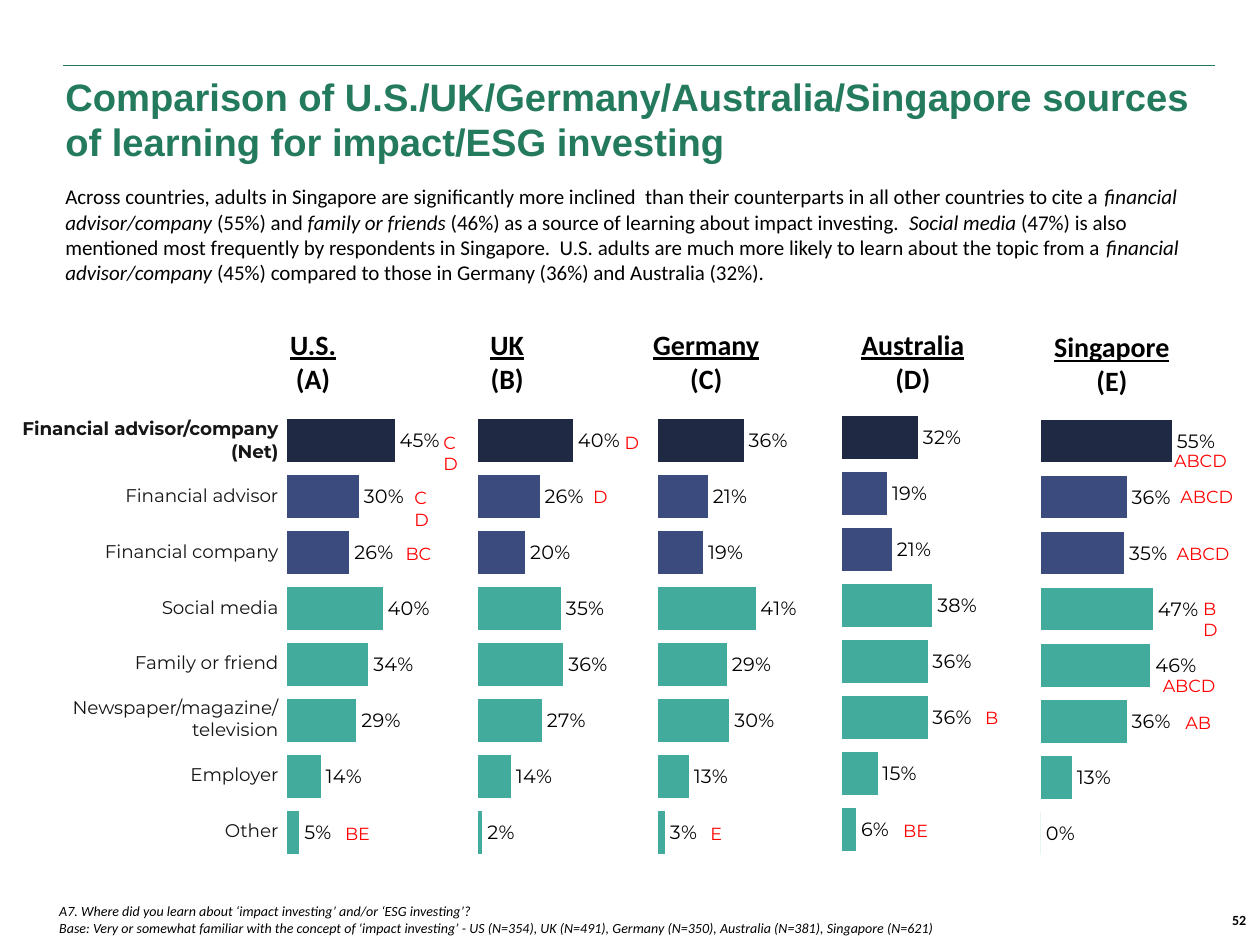
import pptx
import pptx.util
import pptx.chart.data
import pptx.dml.color
import pptx.enum.chart
import pptx.enum.shapes
import pptx.enum.text
import pptx.oxml
import pptx.oxml.ns
from lxml import etree

Inches, Pt = pptx.util.Inches, pptx.util.Pt
ALIGN = pptx.enum.text.PP_ALIGN
ANCHOR = pptx.enum.text.MSO_ANCHOR

GREEN, TEAL, BLUE, NAVY = "237A5D", "43AB9B", "3B4B7D", "202944"
BLACK, RED, INK = "000000", "FF0000", "171616"

TITLE = ("Comparison of U.S./UK/Germany/Australia/Singapore sources of learning "
         "for impact/ESG investing")
SUMMARY = [
    ("Across countries, adults in Singapore are significantly more inclined  than "
     "their counterparts in all other countries to cite a ", False),
    ("financial advisor/company", True),
    (" (55%) and ", False),
    ("family or friends", True),
    (" (46%) as a source of learning about impact investing.  ", False),
    ("Social media ", True),
    ("(47%) is also mentioned most frequently by respondents in Singapore.  U.S. adults "
     "are much more likely to learn about the topic from a ", False),
    ("financial advisor/company ", True),
    ("(45%) compared to those in Germany (36%) and Australia (32%).", False),
]
FOOTNOTES = [
    "A7. Where did you learn about ‘impact investing’ and/or ‘ESG investing’?",
    "Base: Very or somewhat familiar with the concept of 'impact investing’ - US (N=354), "
    "UK (N=491), Germany (N=350), Australia (N=381), Singapore (N=621)",
]
SOURCES = [
    (["Financial advisor/company (Net)"], NAVY),
    (["Financial advisor"], BLUE),
    (["Financial company"], BLUE),
    (["Social media"], TEAL),
    (["Family or friend"], TEAL),
    (["Newspaper/magazine/", "television"], TEAL),
    (["Employer"], TEAL),
    (["Other"], TEAL),
]
COUNTRIES = [
    dict(name="U.S.", letter="A", head=(2.2, 2.55, 0.57), chart=(2.2, 2.99), plot_y=0.047,
         values=[45, 30, 26, 40, 34, 29, 14, 5]),
    dict(name="UK", letter="B", head=(3.79, 2.55, 0.47), chart=(3.71, 2.99), plot_y=0.047,
         values=[40, 26, 20, 35, 36, 27, 14, 2]),
    dict(name="Germany", letter="C", head=(5.02, 2.55, 1.17), chart=(5.14, 2.99), plot_y=0.047,
         values=[36, 21, 19, 41, 29, 30, 13, 3]),
    dict(name="Australia", letter="D", head=(6.73, 2.55, 1.03), chart=(6.6, 2.99), plot_y=0.041,
         values=[32, 19, 21, 38, 36, 36, 15, 6]),
    dict(name="Singapore", letter="E", head=(8.26, 2.57, 1.13), chart=(8.18, 3.02), plot_y=0.041,
         values=[55, 36, 35, 47, 46, 36, 13, 0]),
]
MARKS = [
    ("CD", 3.42, 3.38), ("CD", 3.19, 3.82), ("BC", 3.12, 4.26), ("BE", 2.64, 6.48),
    ("D", 4.86, 3.38), ("D", 4.61, 3.81), ("E", 5.54, 6.48),
    ("B", 7.72, 5.56), ("BE", 7.07, 6.46),
    ("ABCD", 9.22, 3.52), ("ABCD", 9.27, 3.81), ("ABCD", 9.24, 4.26),
    ("BD", 9.45, 4.7), ("ABCD", 9.13, 5.31), ("AB", 9.31, 5.6),
]
MARK_WIDTHS = {1: 0.31, 2: 0.41, 4: 0.62}


def rgb(color):
    return pptx.dml.color.RGBColor.from_string(color)


def add_run(p, text, size, font="Calibri", color=BLACK, bold=False, italic=False, underline=False):
    r = p.add_run()
    r.text = text
    f = r.font
    f.size, f.name, f.bold, f.italic, f.underline = Pt(size), font, bold, italic, underline
    f.color.rgb = rgb(color)


def paragraph(tf, index, align=ALIGN.LEFT):
    p = tf.add_paragraph() if index else tf.paragraphs[0]
    p.alignment = align
    return p


def add_box(s, x, y, w, h, wrap=True, anchor=ANCHOR.TOP):
    tf = s.shapes.add_textbox(Inches(x), Inches(y), Inches(w), Inches(h)).text_frame
    tf.word_wrap = wrap
    tf.vertical_anchor = anchor
    return tf


def add_bars(s, country):
    data = pptx.chart.data.CategoryChartData(number_format="0%")
    data.categories = ["1"]
    for i, value in enumerate(reversed(country["values"]), 1):
        data.add_series(f"Series {i}", [value / 100])
    x, y = country["chart"]
    chart = s.shapes.add_chart(pptx.enum.chart.XL_CHART_TYPE.BAR_CLUSTERED, Inches(x), Inches(y),
                               Inches(2.47), Inches(4.28), data).chart
    chart.has_legend = chart.has_title = False
    chart.font.size, chart.font.name = Pt(11), "Montserrat"
    chart.font.color.rgb = rgb(BLACK)
    axis = chart.value_axis
    axis.minimum_scale, axis.maximum_scale = 0, 1
    axis.has_major_gridlines = False
    axis.visible = chart.category_axis.visible = False
    plot = chart.plots[0]
    plot.gap_width, plot.overlap, plot.vary_by_categories = 80, -31, False
    for ser, (_, color) in zip(plot.series, reversed(SOURCES)):
        ser.format.fill.solid()
        ser.format.fill.fore_color.rgb = rgb(color)
        ser.invert_if_negative = False
        labels = ser.data_labels
        labels.show_value = True
        labels.number_format, labels.number_format_is_linked = "0%", False
        labels.position = pptx.enum.chart.XL_LABEL_POSITION.OUTSIDE_END
    area = chart._chartSpace.chart.plotArea
    for old in area.findall(pptx.oxml.ns.qn("c:layout")):
        area.remove(old)
    layout = etree.Element(pptx.oxml.ns.qn("c:layout"))
    manual = etree.SubElement(layout, pptx.oxml.ns.qn("c:manualLayout"))
    for tag, val in [("layoutTarget", "inner"), ("xMode", "edge"), ("yMode", "edge"), ("x", 0.033),
                     ("y", country["plot_y"]), ("w", 0.765), ("h", 0.87)]:
        etree.SubElement(manual, pptx.oxml.ns.qn("c:" + tag)).set("val", str(val))
    area.insert(0, layout)


def add_sources(s):
    table = s.shapes.add_table(len(SOURCES), 1, Inches(0.03), Inches(3.27),
                               Inches(2.19), Inches(3.54)).table
    table.first_row = table.horz_banding = False
    for i, (lines, _) in enumerate(SOURCES):
        cell = table.cell(i, 0)
        cell.fill.background()
        cell.vertical_anchor = ANCHOR.MIDDLE
        cell.margin_left = cell.margin_right = cell.margin_top = Inches(0.01)
        cell.margin_bottom = 0
        for j, line in enumerate(lines):
            p = paragraph(cell.text_frame, j, ALIGN.RIGHT)
            add_run(p, line, 10.5, "Montserrat", INK, bold=i == 0)


def main():
    prs = pptx.Presentation()
    prs.slide_width, prs.slide_height = Inches(10), Inches(7.5)
    s = prs.slides.add_slide(prs.slide_layouts[6])

    rule = s.shapes.add_connector(pptx.enum.shapes.MSO_CONNECTOR.STRAIGHT, Inches(0.5),
                                  Inches(0.52), Inches(9.64), Inches(0.52))
    rule.line.color.rgb, rule.line.width = rgb(GREEN), Pt(0.5)
    etree.SubElement(rule._element.spPr, pptx.oxml.ns.qn("a:effectLst"))

    tf = add_box(s, 0.42, 0.53, 9.44, 0.83)
    add_run(paragraph(tf, 0), TITLE, 21.8, "Arial", GREEN, bold=True)

    p = paragraph(add_box(s, 0.42, 1.41, 9.16, 0.91), 0)
    for text, italic in SUMMARY:
        add_run(p, text, 12, italic=italic)

    add_sources(s)
    for country in COUNTRIES:
        add_bars(s, country)
        tf = add_box(s, *country["head"], 0.64, wrap=False)
        add_run(paragraph(tf, 0, ALIGN.CENTER), country["name"], 16, bold=True, underline=True)
        add_run(paragraph(tf, 1, ALIGN.CENTER), f"({country['letter']})", 16, bold=True)

    for text, x, y in MARKS:
        tf = add_box(s, x, y, MARK_WIDTHS[len(text)], 0.27, wrap=False)
        add_run(paragraph(tf, 0), text, 10, "Montserrat", RED)

    tf = add_box(s, 0.42, 7.05, 8.06, 0.43, anchor=ANCHOR.BOTTOM)
    tf.margin_left = tf.margin_right = tf.margin_top = tf.margin_bottom = Inches(0.05)
    for i, line in enumerate(FOOTNOTES):
        add_run(paragraph(tf, i), line, 8, italic=True)

    tf = add_box(s, 7.8, 7.1, 2.19, 0.4, anchor=ANCHOR.MIDDLE)
    add_run(paragraph(tf, 0, ALIGN.RIGHT), "52", 8, bold=True)

    prs.save("out.pptx")


if __name__ == "__main__":
    main()
